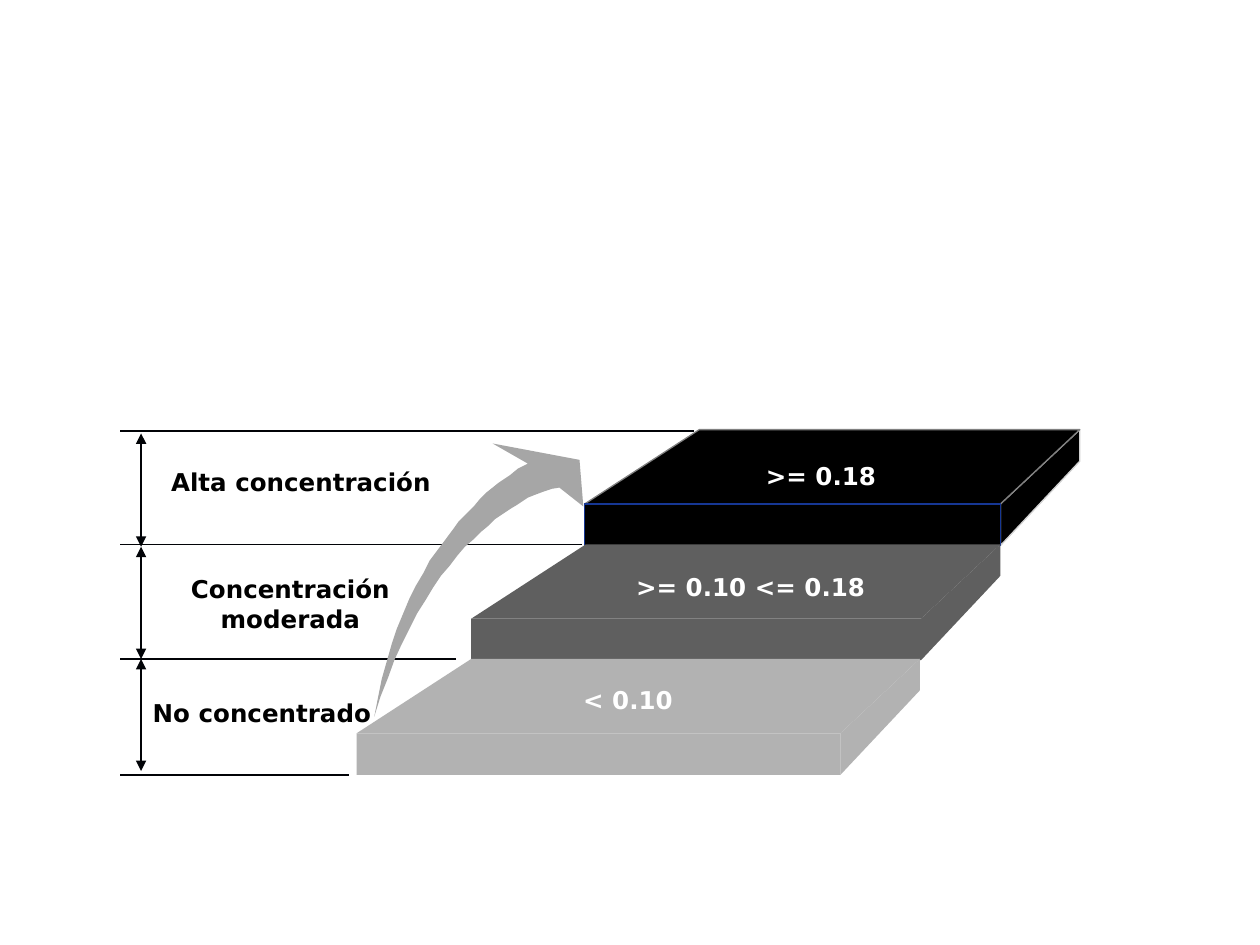
from dataclasses import dataclass
from typing import Optional

from lxml.etree import SubElement
from pptx import Presentation
from pptx.dml.color import RGBColor
from pptx.enum.shapes import MSO_CONNECTOR, MSO_SHAPE
from pptx.enum.text import MSO_AUTO_SIZE, PP_ALIGN
from pptx.oxml.ns import qn
from pptx.util import Inches, Pt

FONT = "DejaVu Sans"
RULE_COLOR = "010307"
RULE_LEFT = 0.95
ARROW_X = 1.12
STEP_TOP = 3.41
STEP_RISE = 0.91
TOP_DEPTH = 0.59
FRONT_HEIGHT = 0.33
SIDE_HEIGHT = 0.25
BACK_SHIFT_LEFT = 0.91
BACK_SHIFT_RIGHT = 0.63

Point = tuple[float, float]


@dataclass
class Step:
    left: float
    right: float
    fill: str
    side_line: Optional[str] = None
    top_line: Optional[str] = None
    front_line: Optional[str] = None


@dataclass
class Label:
    lines: list[str]
    left: float
    top: float
    width: float
    height: float = 0.34
    color: str = "000000"
    align: PP_ALIGN = PP_ALIGN.LEFT


STEPS = [
    Step(4.64, 7.94, "000000", "D1D1D1", "808080", "163794"),
    Step(3.74, 7.31, "5F5F5F"),
    Step(2.83, 6.67, "B2B2B2"),
]

RULES = [(5.51, 3.42), (4.62, 4.32), (3.62, 5.23), (2.77, 6.15)]
SPANS = [(3.44, 4.34), (4.34, 5.23), (5.23, 6.12)]

LABELS = [
    Label(["Alta concentración"], 1.26, 3.66, 2.33),
    Label(["Concentración", "moderada"], 1.38, 4.51, 1.85, 0.57, align=PP_ALIGN.CENTER),
    Label(["No concentrado"], 1.11, 5.49, 1.94, align=PP_ALIGN.CENTER),
    Label([">= 0.18"], 5.98, 3.61, 1.1, color="FFFFFF"),
    Label([">= 0.10 <= 0.18"], 4.95, 4.49, 2.06, color="FFFFFF"),
    Label(["< 0.10"], 4.53, 5.39, 1, color="FFFFFF"),
]

OUTER_CURVE = [
    (2.97, 5.69), (3.03, 5.39), (3.07, 5.25), (3.11, 5.11), (3.15, 4.99),
    (3.2, 4.87), (3.25, 4.75), (3.3, 4.65), (3.36, 4.55), (3.41, 4.45),
    (3.47, 4.37), (3.53, 4.29), (3.59, 4.21), (3.64, 4.14), (3.7, 4.08),
    (3.76, 4.02), (3.81, 3.96), (3.86, 3.91), (3.91, 3.87), (3.96, 3.83),
    (4.05, 3.77), (4.11, 3.72), (4.19, 3.68),
]
ARROW_TIP = [(3.91, 3.52), (4.6, 3.65), (4.63, 4.02)]
INNER_CURVE = [
    (4.44, 3.87), (4.38, 3.88), (4.32, 3.9), (4.24, 3.93), (4.19, 3.95),
    (4.1, 4.01), (4.05, 4.04), (3.99, 4.08), (3.93, 4.12), (3.88, 4.17),
    (3.82, 4.22), (3.76, 4.28), (3.69, 4.34), (3.63, 4.41), (3.57, 4.49),
    (3.5, 4.57), (3.44, 4.66), (3.38, 4.76), (3.31, 4.87), (3.25, 4.99),
    (3.19, 5.11), (3.13, 5.24), (3.08, 5.38), (3.02, 5.53),
]


def rgb(value: str) -> RGBColor:
    return RGBColor.from_string(value)


def paint(shape, fill: str, line: Optional[str] = None, width: float = 0) -> None:
    shape.shadow.inherit = False
    shape.fill.solid()
    shape.fill.fore_color.rgb = rgb(fill)
    if line is None:
        shape.line.fill.background()
    else:
        shape.line.color.rgb = rgb(line)
        shape.line.width = Pt(width)


def add_outline(shapes, points: list[Point], fill: str, line: Optional[str] = None) -> None:
    start, *rest = [(Inches(x), Inches(y)) for x, y in points]
    builder = shapes.build_freeform(*start)
    builder.add_line_segments(rest, close=True)
    paint(builder.convert_to_shape(), fill, line)


def add_step(shapes, step: Step, top: float) -> None:
    edge = top + TOP_DEPTH
    bottom = edge + FRONT_HEIGHT
    back_left = step.left + BACK_SHIFT_LEFT
    back_right = step.right + BACK_SHIFT_RIGHT
    side = [(back_right, top + SIDE_HEIGHT), (step.right, bottom),
            (step.right, edge), (back_right, top)]
    surface = [(step.right, edge), (step.left, edge), (back_left, top), (back_right, top)]
    add_outline(shapes, side, step.fill, step.side_line)
    add_outline(shapes, surface, step.fill, step.top_line)
    front = shapes.add_shape(
        MSO_SHAPE.RECTANGLE, Inches(step.left), Inches(edge),
        Inches(step.right - step.left), Inches(FRONT_HEIGHT))
    paint(front, step.fill, step.front_line, 0.75)


def add_rule(shapes, start: Point, end: Point, arrows: bool = False) -> None:
    rule = shapes.add_connector(
        MSO_CONNECTOR.STRAIGHT, *(Inches(value) for value in start + end))
    rule.line.color.rgb = rgb(RULE_COLOR)
    rule.line.width = Pt(0.75)
    if arrows:
        outline = rule.line._get_or_add_ln()
        for ending in ("a:headEnd", "a:tailEnd"):
            SubElement(outline, qn(ending), type="triangle")
    SubElement(rule._element.spPr, qn("a:effectLst"))


def add_text(shapes, lines: list[str], *, left: float, top: float, width: float,
             height: float, color: str, align: PP_ALIGN, size: float = 14) -> None:
    frame = shapes.add_textbox(
        Inches(left), Inches(top), Inches(width), Inches(height)).text_frame
    frame.word_wrap = False
    frame.auto_size = MSO_AUTO_SIZE.SHAPE_TO_FIT_TEXT
    frame.text = "\n".join(lines)
    for paragraph in frame.paragraphs:
        paragraph.alignment = align
        for run in paragraph.runs:
            run.font.name = FONT
            run.font.size = Pt(size)
            run.font.bold = True
            run.font.color.rgb = rgb(color)


def main() -> None:
    presentation = Presentation()
    presentation.slide_width = Inches(10)
    presentation.slide_height = Inches(7.5)
    shapes = presentation.slides.add_slide(presentation.slide_layouts[6]).shapes
    for right, y in RULES:
        add_rule(shapes, (right, y), (RULE_LEFT, y))
    for upper, lower in SPANS:
        add_rule(shapes, (ARROW_X, upper), (ARROW_X, lower), arrows=True)
    for index, step in enumerate(STEPS):
        add_step(shapes, step, STEP_TOP + index * STEP_RISE)
    add_outline(shapes, OUTER_CURVE + ARROW_TIP + INNER_CURVE, "A6A6A6")
    for label in LABELS:
        add_text(shapes, label.lines, left=label.left, top=label.top, width=label.width,
                 height=label.height, color=label.color, align=label.align)
    presentation.save("out.pptx")


if __name__ == "__main__":
    main()
